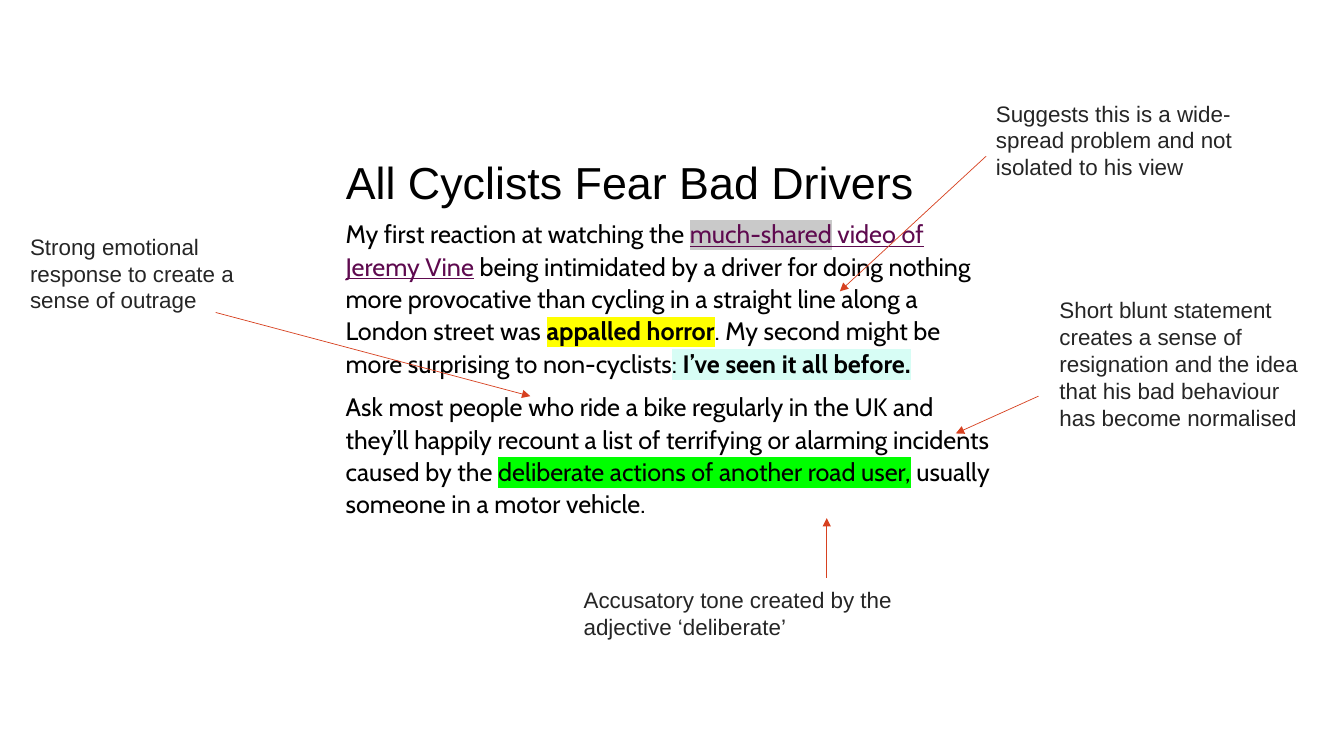
from lxml import etree
from pptx import Presentation
from pptx.dml.color import RGBColor
from pptx.enum.shapes import MSO_CONNECTOR
from pptx.enum.text import MSO_ANCHOR, PP_ALIGN
from pptx.oxml.ns import qn
from pptx.util import Inches, Pt

STRAIGHT = MSO_CONNECTOR.STRAIGHT
TOP = MSO_ANCHOR.TOP
LEFT = PP_ALIGN.LEFT

COLOURS = {
    "text": "000000",
    "note": "252525",
    "link": "5E0A4F",
    "arrow": "D74120",
    "grey": "C9C9C9",
    "yellow": "FFFF00",
    "mint": "D7FDF5",
    "green": "00FF00",
}

# Each span: text, colour, highlight, bold, underlined
ARTICLE = [
    [
        ("My first reaction at watching the ", "text", None, False, False),
        ("much-shared", "link", "grey", False, True),
        (" video of Jeremy Vine", "link", None, False, True),
        (" being intimidated by a driver for doing nothing more provocative than "
         "cycling in a straight line along a London street was ", "text", None, False, False),
        ("appalled horror", "text", "yellow", True, False),
        (". My second might be more surprising to non-cyclists", "text", None, False, False),
        (": ", "text", "mint", False, False),
        ("I’ve seen it all before.", "text", "mint", True, False),
    ],
    [
        ("Ask most people who ride a bike regularly in the UK and they’ll happily recount "
         "a list of terrifying or alarming incidents caused by the ", "text", None, False, False),
        ("deliberate actions of another road user,", "text", "green", False, False),
        (" usually someone in a motor vehicle.", "text", None, False, False),
    ],
]

# Each note: text, box (left, top, width, height), arrow start, arrow end
NOTES = [
    ("Strong emotional response to create a sense of outrage",
     (0.2, 2.26, 2.59, 0.91), (2.14, 3.1), (5.26, 3.93)),
    ("Short blunt statement creates a sense of resignation and the idea that his bad "
     "behaviour has become normalised",
     (10.41, 2.89, 2.73, 1.45), (10.3, 3.93), (9.48, 4.3)),
    ("Suggests this is a wide-spread problem and not isolated to his view",
     (9.78, 0.94, 2.83, 0.91), (9.78, 1.55), (8.33, 2.89)),
    ("Accusatory tone created by the adjective ‘deliberate’",
     (5.69, 5.77, 4.09, 0.64), (8.2, 5.73), (8.2, 5.14)),
]


def style_paragraph(para, font_name, size, colour):
    para.alignment = LEFT
    para.font.name = font_name
    para.font.size = Pt(size)
    para.font.color.rgb = RGBColor.from_string(COLOURS[colour])


def add_text_box(page, place):
    box = page.shapes.add_textbox(*map(Inches, place))
    box.text_frame.word_wrap = True
    return box.text_frame


deck = Presentation()
deck.slide_width = Inches(13.33)
deck.slide_height = Inches(7.5)
page = deck.slides.add_slide(deck.slide_layouts[5])

# Headline
title = page.shapes.title
title.left, title.top, title.width, title.height = map(Inches, (3.33, 1.45, 6.67, 0.65))
title.text_frame.vertical_anchor = TOP
title.text_frame.text = "All Cyclists Fear Bad Drivers"
headline = title.text_frame.paragraphs[0]
headline.line_spacing = 1.07
style_paragraph(headline, "Arial", 32, "text")

# Article with highlighted phrases
article = add_text_box(page, (3.33, 2.1, 6.67, 3.1))
for index, spans in enumerate(ARTICLE):
    para = article.paragraphs[0] if index == 0 else article.add_paragraph()
    para.line_spacing = 1.07
    para.space_after = Pt(8)
    style_paragraph(para, "Cabin", 18, "text")
    for text, colour, highlight, bold, underlined in spans:
        span = para.add_run()
        span.text = text
        span.font.color.rgb = RGBColor.from_string(COLOURS[colour])
        if bold:
            span.font.bold = True
        if underlined:
            span.font.underline = True
        if highlight:
            marker = etree.SubElement(span.font._element, qn("a:highlight"))
            etree.SubElement(marker, qn("a:srgbClr"), val=COLOURS[highlight])

# Notes, each with an arrow to the article
for text, place, start, end in NOTES:
    arrow = page.shapes.add_connector(STRAIGHT, *map(Inches, start + end))
    arrow.line.color.rgb = RGBColor.from_string(COLOURS["arrow"])
    arrow.line.width = Pt(0.5)
    etree.SubElement(arrow.line._get_or_add_ln(), qn("a:tailEnd"), type="triangle")
    etree.SubElement(arrow._element.spPr, qn("a:effectLst"))

    note = add_text_box(page, place)
    note.text = text
    style_paragraph(note.paragraphs[0], "Arial", 16, "note")

deck.save("out.pptx")
